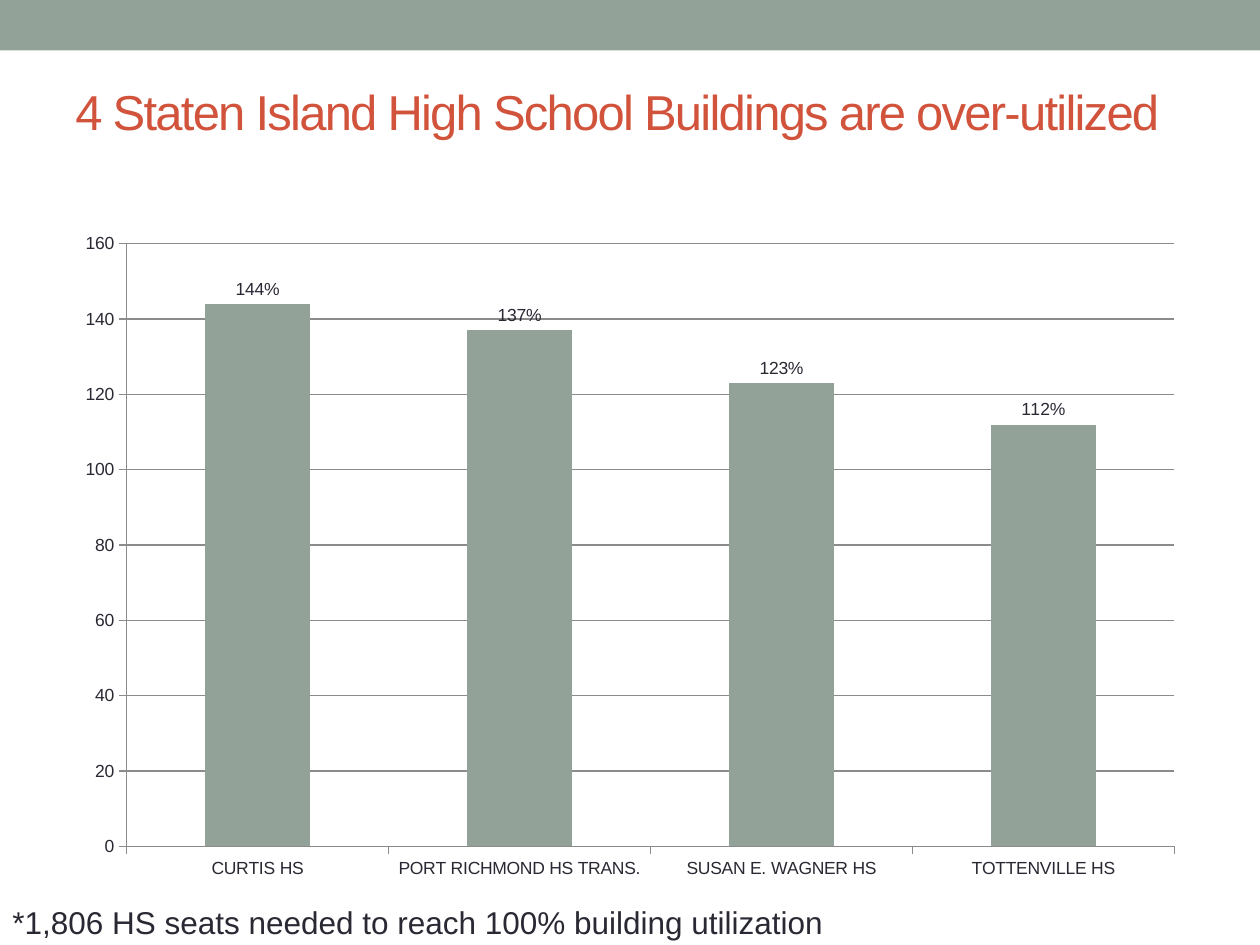
from dataclasses import dataclass
from pptx import Presentation
from pptx.chart.data import CategoryChartData as ChartData
from pptx.dml.color import RGBColor as RGB
from pptx.enum.chart import XL_CHART_TYPE as Kind, XL_LABEL_POSITION as Spot, XL_TICK_MARK as Tick
from pptx.enum.shapes import MSO_SHAPE as Form
from pptx.enum.text import MSO_ANCHOR as Anchor
from pptx.util import Inches, Pt


@dataclass(frozen=True)
class Theme:
    font: str = "Arial"
    sage: RGB = RGB(0x93, 0xA2, 0x99)
    rust: RGB = RGB(0xD2, 0x53, 0x3C)
    ink: RGB = RGB(0x29, 0x29, 0x34)
    grey: RGB = RGB(0x8B, 0x8B, 0x8B)
    title: int = 28
    note: int = 18
    label: int = 10


theme = Theme()
SCHOOLS = {
    "CURTIS HS": 144,
    "PORT RICHMOND HS TRANS.": 137,
    "SUSAN E. WAGNER HS": 123,
    "TOTTENVILLE HS": 112,
}


def place(box):
    return [Inches(side) for side in box]


def add_text(slide, box, text, size, color, anchor=Anchor.TOP, wrap=True, track=0):
    frame = slide.shapes.add_textbox(*place(box)).text_frame
    frame.word_wrap = wrap
    frame.vertical_anchor = anchor
    run = frame.paragraphs[0].add_run()
    run.text = text
    run.font.name = theme.font
    run.font.size = Pt(size)
    run.font.color.rgb = color
    if track:
        run.font._element.set("spc", str(track * 100))


def add_band(slide, box):
    band = slide.shapes.add_shape(Form.RECTANGLE, *place(box))
    band.shadow.inherit = False
    band.fill.solid()
    band.fill.fore_color.rgb = theme.sage
    band.line.fill.background()


def style_line(line):
    line.color.rgb = theme.grey
    line.width = Pt(0.75)


def add_bars(slide, box):
    data = ChartData()
    data.categories = list(SCHOOLS)
    data.add_series("Series 1", list(SCHOOLS.values()))
    chart = slide.shapes.add_chart(Kind.COLUMN_CLUSTERED, *place(box), data).chart
    chart.has_legend = False
    chart.has_title = False
    chart.font.name = theme.font
    chart.font.size = Pt(theme.label)
    chart.font.color.rgb = theme.ink

    for axis in (chart.category_axis, chart.value_axis):
        axis.major_tick_mark = Tick.OUTSIDE
        axis.minor_tick_mark = Tick.NONE
        style_line(axis.format.line)
    scale = chart.value_axis
    scale.minimum_scale, scale.maximum_scale, scale.major_unit = 0, 160, 20
    scale.has_major_gridlines = True
    style_line(scale.major_gridlines.format.line)

    plot = chart.plots[0]
    plot.gap_width = 150
    plot.vary_by_categories = False
    fill = plot.series[0].format.fill
    fill.solid()
    fill.fore_color.rgb = theme.sage
    plot.has_data_labels = True
    labels = plot.data_labels
    labels.show_value = True
    labels.number_format = '0"%"'
    labels.number_format_is_linked = False
    labels.position = Spot.OUTSIDE_END


def main():
    deck = Presentation()
    deck.slide_width, deck.slide_height = Inches(10), Inches(7.5)
    slide = deck.slides.add_slide(deck.slide_layouts[6])
    add_band(slide, (0, 0, 10, 0.4))
    add_text(slide, (0.5, 0.34, 9, 1.08),
             "4 Staten Island High School Buildings are over-utilized",
             theme.title, theme.rust, anchor=Anchor.MIDDLE, track=-1)
    add_text(slide, (0, 7.12, 6.7, 0.4),
             "*1,806 HS seats needed to reach 100% building utilization",
             theme.note, theme.ink, wrap=False)
    add_bars(slide, (0.5, 1.75, 9, 5.33))
    deck.save("out.pptx")


if __name__ == "__main__":
    main()
